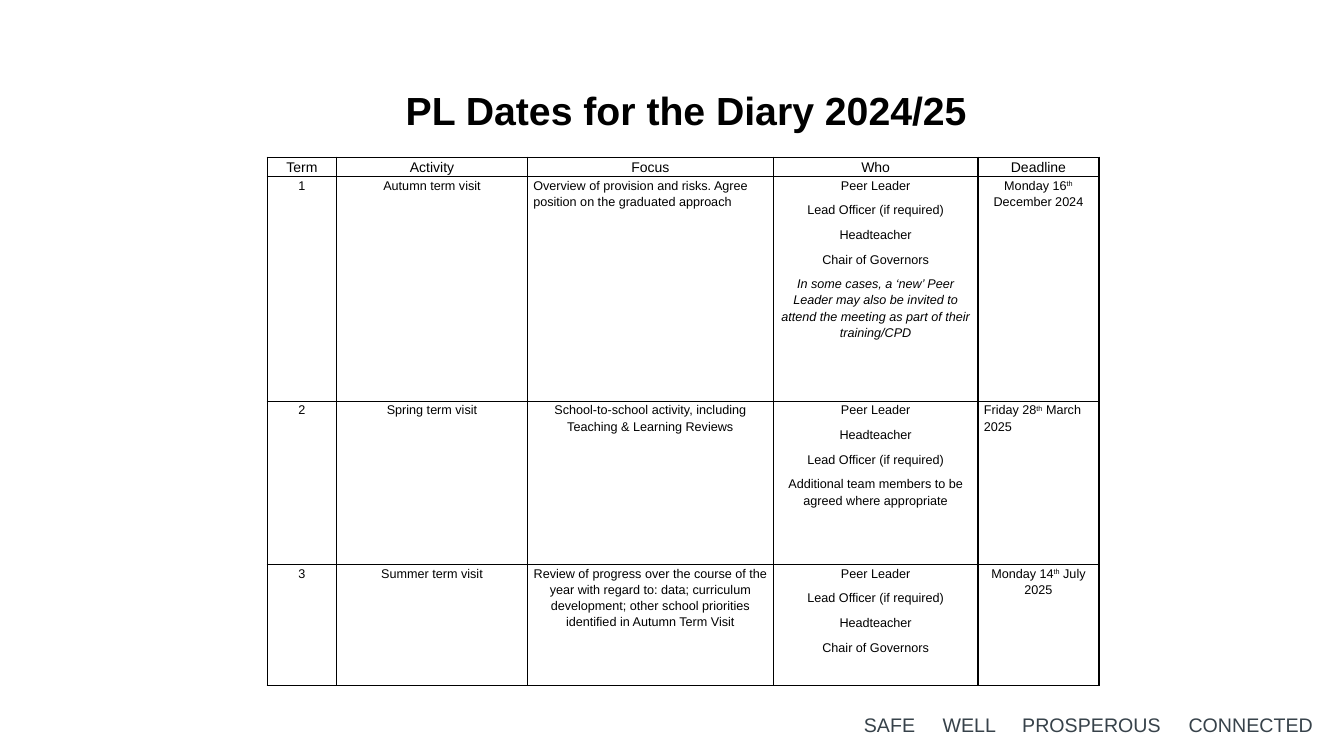
from pptx import Presentation
from pptx.dml.color import RGBColor
from pptx.enum.text import MSO_ANCHOR as Anchor, PP_ALIGN as Align
from pptx.oxml import parse_xml
from pptx.oxml.ns import nsdecls
from pptx.util import Inches, Pt

BLACK = RGBColor(0x00, 0x00, 0x00)
SLATE = RGBColor(0x37, 0x42, 0x4A)

HEADS = ["Term", "Activity", "Focus", "Who", "Deadline"]
NOTE = ("In some cases, a ‘new’ Peer Leader may also be invited to attend "
        "the meeting as part of their training/CPD")
# A cell is a list of paragraphs; text between carets is superscript
TERMS = [
    [["1"], ["Autumn term visit"],
     ["Overview of provision and risks. Agree position on the graduated approach"],
     ["Peer Leader", "Lead Officer (if required)", "Headteacher",
      "Chair of Governors", NOTE],
     ["Monday 16^th^ December 2024"]],
    [["2"], ["Spring term visit"],
     ["School-to-school activity, including Teaching & Learning Reviews"],
     ["Peer Leader", "Headteacher", "Lead Officer (if required)",
      "Additional team members to be agreed where appropriate"],
     ["Friday 28^th^ March 2025"]],
    [["3"], ["Summer term visit"],
     ["Review of progress over the course of the year with regard to: data; "
      "curriculum development; other school priorities identified in Autumn Term Visit"],
     ["Peer Leader", "Lead Officer (if required)", "Headteacher",
      "Chair of Governors"],
     ["Monday 14^th^ July 2025"]],
]
LEFT = {(1, 2), (2, 4)}
COLS = [0.69, 1.89, 2.44, 2.03, 1.2]
ROWS = [0.18, 2.23, 1.62, 1.2]


class Page:
    face = "Arial"

    def __init__(self, slide):
        self.slide = slide

    def style(self, run, size, color=BLACK, bold=False, slant=False):
        font = run.font
        font.name, font.size = self.face, Pt(size)
        font.bold, font.italic = bold, slant
        font.color.rgb = color

    def text(self, box, words, size, color, align, bold=False, stops=()):
        frame = self.slide.shapes.add_textbox(*map(Inches, box)).text_frame
        frame.word_wrap = True
        frame.vertical_anchor = Anchor.TOP
        frame.text = words
        para = frame.paragraphs[0]
        para.alignment = align
        if stops:
            tabs = "".join(f'<a:tab pos="{Inches(x)}" algn="l"/>' for x in stops)
            para._p.get_or_add_pPr().append(
                parse_xml(f'<a:tabLst {nsdecls("a")}>{tabs}</a:tabLst>'))
        for run in para.runs:
            self.style(run, size, color, bold)
        return para

    def border(self, cell):
        props = cell._tc.get_or_add_tcPr()
        for spot, side in enumerate("LRTB"):
            props.insert(spot, parse_xml(
                f'<a:ln{side} {nsdecls("a")} w="{Pt(1)}"><a:solidFill>'
                f'<a:srgbClr val="{BLACK}"/></a:solidFill></a:ln{side}>'))

    def fill(self, cell, lines, size, align):
        cell.margin_left = cell.margin_right = Inches(0.06)
        cell.margin_top = cell.margin_bottom = 0
        cell.fill.background()
        self.border(cell)
        frame = cell.text_frame
        for num, line in enumerate(lines):
            para = frame.add_paragraph() if num else frame.paragraphs[0]
            para.alignment = align
            para.line_spacing = 1.15
            para.space_before = Pt(3 if num else 0)
            para.space_after = Pt(3)
            for part, words in enumerate(line.split("^")):
                run = para.add_run()
                run.text = words
                self.style(run, size, slant=line == NOTE)
                if part % 2:
                    run.font._element.set("baseline", "30000")

    def table(self, left, top, cols, rows, data):
        table = self.slide.shapes.add_table(
            len(rows), len(cols), Inches(left), Inches(top),
            Inches(sum(cols)), Inches(sum(rows))).table
        table.first_row = table.horz_banding = False
        for col, width in zip(table.columns, cols):
            col.width = Inches(width)
        for row, height in zip(table.rows, rows):
            row.height = Inches(height)
        for r, row in enumerate(data):
            for c, lines in enumerate(row):
                align = Align.LEFT if (r, c) in LEFT else Align.CENTER
                self.fill(table.cell(r, c), lines, 9 if r else 10, align)


def main():
    deck = Presentation()
    deck.slide_width, deck.slide_height = Inches(13.33), Inches(7.5)
    page = Page(deck.slides.add_slide(deck.slide_layouts[6]))

    # Footer values
    page.text((8.47, 7.02, 4.67, 0.34), "SAFE\tWELL\tPROSPEROUS\tCONNECTED",
              14, SLATE, Align.LEFT, stops=(0.78, 1.57, 3.22))

    # Title
    title = page.text((0.83, 0.86, 11.95, 0.64), "PL Dates for the Diary 2024/25",
                      28, BLACK, Align.CENTER, bold=True)
    title.line_spacing = 0.9

    # Diary table
    page.table(2.65, 1.56, COLS, ROWS, [[[head] for head in HEADS]] + TERMS)

    deck.save("out.pptx")


if __name__ == "__main__":
    main()
